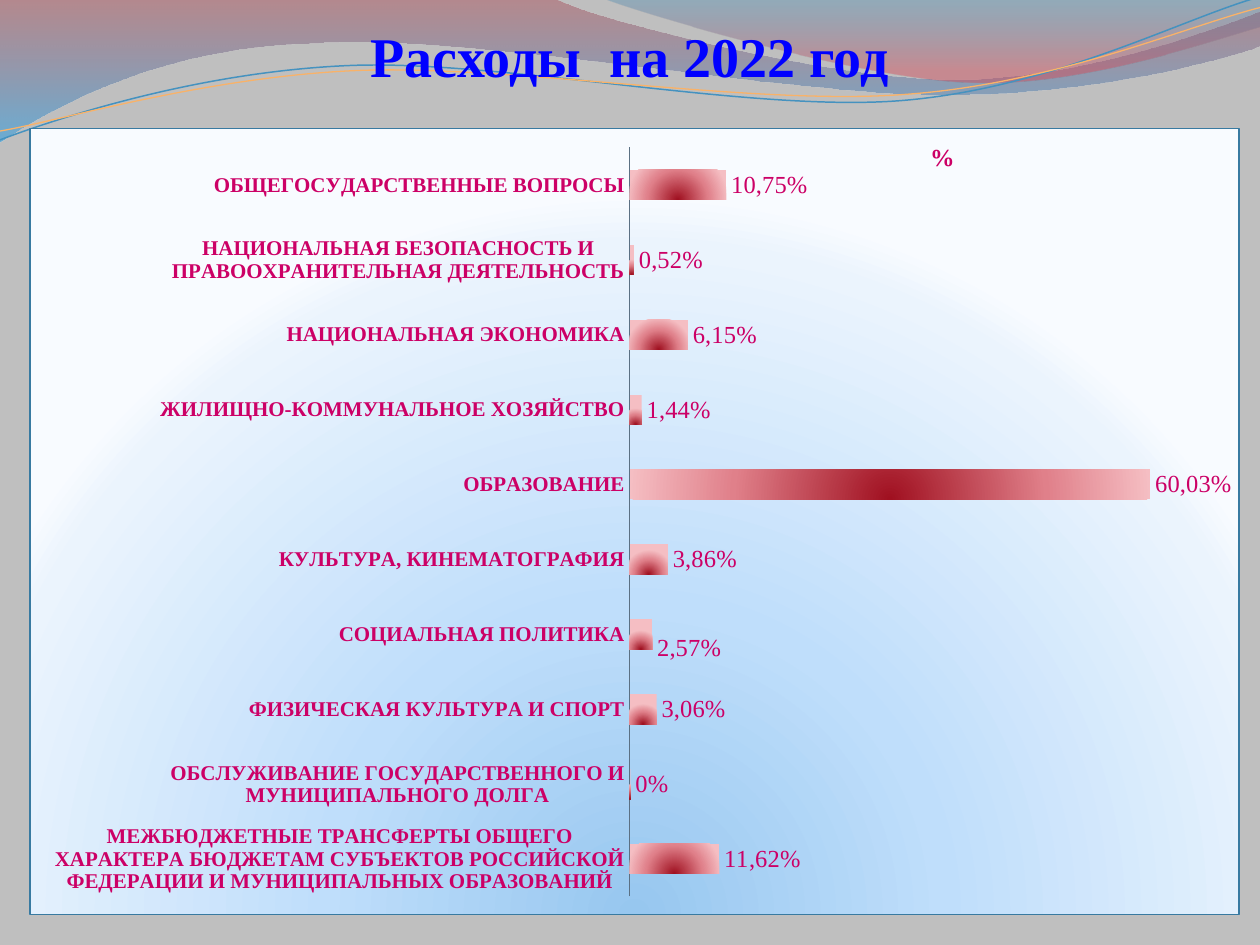
import math

from pptx import Presentation, util as u
from pptx.chart.data import CategoryChartData
from pptx.dml.color import RGBColor
from pptx.enum import chart as ch, text as tx
from pptx.oxml import parse_xml
from pptx.oxml.ns import nsdecls, qn

COLORS = {"background": "BFBFBF", "heading": "0000FF", "text": "CC0066",
          "border": "387AA1", "axis": "5B7083",
          "blue line": "4592BF", "orange line": "F9B268"}
FONT = "Times New Roman"

# Gradient stops: position %, colour, opacity %
LEFT_STOPS = [(0, "A84752", 45), (100, "249FE6", 55)]
RIGHT_STOPS = [(0, "2A7EAF", 30), (80, "D24B5A", 45)]
PANEL_STOPS = [(0, "97C7EF", 100), (43, "BFDEFB", 100),
               (93, "EBF4FD", 100), (100, "F8FBFF", 100)]
BAR_STOPS = [(0, "A01020", 100), (60, "E0808A", 100), (100, "F5BEC3", 100)]

# Outlines in inches: two numbers make a line, six make a Bezier curve
LEFT_WAVE = [(0, 0), (4.4, -0.01), (4.76, 0.17, 6.64, 0.63, 7.58, 0.63),
             (8.53, 0.63, 9.58, 0.26, 10, 0.09), (10.01, 0.36),
             (9.83, 0.44, 8.7, 0.76, 7.46, 0.75),
             (6.22, 0.75, 3.82, 0.28, 2.57, 0.34),
             (1.29, 0.36, 0.46, 0.83, -0.01, 1.13), (0, 0)]
RIGHT_WAVE = [(4.79, -0.01), (5.09, 0.11, 6.82, 0.62, 7.69, 0.65),
              (8.56, 0.69, 9.61, 0.32, 10, 0.21), (10, 0), (4.79, -0.01)]
BLUE_CURVE = [(0, 1.11), (0.48, 0.93, 1.58, 0.57, 2.77, 0.52),
              (3.95, 0.47, 5.93, 0.89, 7.13, 0.8),
              (8.33, 0.71, 9.38, 0.15, 9.98, -0.02)]
ORANGE_CURVE = [(0, 1.04), (0.47, 0.96, 1.64, 0.61, 2.83, 0.56),
                (4.03, 0.51, 5.97, 0.84, 7.17, 0.75),
                (8.36, 0.67, 9.41, 0.21, 10, 0.06)]
CURVE_TILT = -2.7
CURVE_CENTER = (4.99, 0.58)

# Category, bar length, label; from the bottom bar up
EXPENSES = [
    ("МЕЖБЮДЖЕТНЫЕ ТРАНСФЕРТЫ ОБЩЕГО ХАРАКТЕРА БЮДЖЕТАМ СУБЪЕКТОВ "
     "РОССИЙСКОЙ ФЕДЕРАЦИИ И МУНИЦИПАЛЬНЫХ ОБРАЗОВАНИЙ", 0.103, "11,62%"),
    ("ОБСЛУЖИВАНИЕ ГОСУДАРСТВЕННОГО И МУНИЦИПАЛЬНОГО ДОЛГА", 0.001, "0%"),
    ("ФИЗИЧЕСКАЯ КУЛЬТУРА И СПОРТ", 0.031, "3,06%"),
    ("СОЦИАЛЬНАЯ ПОЛИТИКА", 0.026, "\n2,57%"),
    ("КУЛЬТУРА, КИНЕМАТОГРАФИЯ", 0.044, "3,86%"),
    ("ОБРАЗОВАНИЕ", 0.598, "60,03%"),
    ("ЖИЛИЩНО-КОММУНАЛЬНОЕ ХОЗЯЙСТВО", 0.014, "1,44%"),
    ("НАЦИОНАЛЬНАЯ ЭКОНОМИКА", 0.067, "6,15%"),
    ("НАЦИОНАЛЬНАЯ БЕЗОПАСНОСТЬ И ПРАВООХРАНИТЕЛЬНАЯ ДЕЯТЕЛЬНОСТЬ",
     0.005, "0,52%"),
    ("ОБЩЕГОСУДАРСТВЕННЫЕ ВОПРОСЫ", 0.111, "10,75%"),
]


def rgb(name):
    return RGBColor.from_string(COLORS[name])


def style_font(font, size, color="text", bold=False):
    font.name, font.size, font.bold = FONT, u.Pt(size), bold
    font.color.rgb = rgb(color)


def write_text(frame, text, align=None, **style):
    paragraph = frame.paragraphs[0]
    paragraph.alignment = align
    run = paragraph.add_run()
    run.text = text
    style_font(run.font, **style)


def set_gradient(properties, stops, radial=False):
    """Replace the empty fill of a shape-properties element by a gradient."""
    stop_xml = "".join(
        f'<a:gs pos="{pos * 1000}"><a:srgbClr val="{color}">'
        f'<a:alpha val="{opacity * 1000}"/></a:srgbClr></a:gs>'
        for pos, color, opacity in stops)
    direction = ('<a:path path="circle"><a:fillToRect l="50000" t="130000" '
                 'r="50000" b="-30000"/></a:path>' if radial
                 else '<a:lin ang="5400000" scaled="1"/>')
    gradient = parse_xml(f'<a:gradFill {nsdecls("a")} rotWithShape="1"><a:gsLst>'
                         f'{stop_xml}</a:gsLst>{direction}</a:gradFill>')
    properties.replace(properties.find(qn("a:noFill")), gradient)


def turn(point, degrees):
    """Turn a point about the centre of the curves."""
    cos, sin = math.cos(math.radians(degrees)), math.sin(math.radians(degrees))
    x, y = (value - middle for value, middle in zip(point, CURVE_CENTER))
    return CURVE_CENTER[0] + x * cos - y * sin, CURVE_CENTER[1] + x * sin + y * cos


def add_outline(slide, outline, tilt=0, closed=False):
    """Draw through all points, then join each curve's three points into a Bezier."""
    points = [turn(part[i:i + 2], -tilt) for part in outline
              for i in range(0, len(part), 2)]
    start, *rest = [(u.Cm(2.54 * x), u.Cm(2.54 * y)) for x, y in points]
    builder = slide.shapes.build_freeform(*start)
    builder.add_line_segments(rest, close=closed)
    shape = builder.convert_to_shape()
    lines = iter(list(shape.element.iter(qn("a:lnTo"))))
    for part in outline[1:]:
        first = next(lines)
        if len(part) == 6:
            curve = parse_xml(f'<a:cubicBezTo {nsdecls("a")}/>')
            first.addprevious(curve)
            for line in (first, next(lines), next(lines)):
                curve.append(line[0])
                line.getparent().remove(line)
    shape.rotation = tilt
    shape.shadow.inherit = False
    shape.fill.background()
    return shape


def add_wave(slide, outline, stops):
    wave = add_outline(slide, outline, closed=True)
    wave.line.fill.background()
    set_gradient(wave.element.spPr, stops)


def add_curve(slide, outline, color, width):
    curve = add_outline(slide, outline, tilt=CURVE_TILT)
    curve.line.color.rgb = rgb(color)
    curve.line.width = u.Pt(width)


def add_heading(slide, text):
    box = slide.shapes.add_textbox(u.Cm(0), u.Cm(0.58), u.Cm(25.4), u.Cm(1.2))
    frame = box.text_frame
    frame.word_wrap = True
    frame.vertical_anchor = tx.MSO_ANCHOR.BOTTOM
    frame.margin_left = frame.margin_right = frame.margin_bottom = 0
    write_text(frame, text, align=tx.PP_ALIGN.CENTER,
               size=32, color="heading", bold=True)


def set_layout(parent, index, **values):
    """Place a chart part by hand; index is where its layout element belongs."""
    layout = parent.find(qn("c:layout"))
    if layout is None:
        layout = parse_xml(f'<c:layout {nsdecls("c")}/>')
        parent.insert(index, layout)
    items = "".join(f'<c:{key} val="{value}"/>' for key, value in values.items())
    layout.append(parse_xml(
        f'<c:manualLayout {nsdecls("c")}>{items}</c:manualLayout>'))


def format_axes(chart):
    categories, values = chart.category_axis, chart.value_axis
    categories.major_tick_mark = ch.XL_TICK_MARK.NONE
    categories.format.line.color.rgb = rgb("axis")
    categories.format.line.width = u.Pt(0.75)
    style_font(categories.tick_labels.font, size=12, bold=True)
    values.minimum_scale, values.maximum_scale = 0, 0.7
    values.has_major_gridlines = False
    values.visible = False


def label_bars(series):
    labels = series.data_labels
    labels.show_value = True
    labels.number_format, labels.number_format_is_linked = "0.0%", False
    style_font(labels.font, size=14)
    for index, (_, _, label) in enumerate(EXPENSES):
        data_label = series.points[index].data_label
        write_text(data_label.text_frame, label, size=14)
        data_label.position = ch.XL_LABEL_POSITION.OUTSIDE_END


def add_expense_chart(slide):
    data = CategoryChartData(number_format="0.0%")
    data.categories = [category for category, _, _ in EXPENSES]
    data.add_series("%", [value for _, value, _ in EXPENSES])
    chart = slide.shapes.add_chart(
        ch.XL_CHART_TYPE.BAR_CLUSTERED, u.Cm(0.59), u.Cm(2.58),
        u.Cm(24.4), u.Cm(15.87), data).chart
    chart.has_legend = False
    style_font(chart.font, size=12, bold=True)
    format_axes(chart)
    write_text(chart.chart_title.text_frame, "%", size=14, bold=True)

    plot = chart.plots[0]
    plot.gap_width, plot.overlap = 150, -25
    plot.vary_by_categories = False
    bars = plot.series[0]
    bars.format.fill.background()
    label_bars(bars)

    root = chart.element
    set_gradient(root.find(f'.//{qn("c:ser")}/{qn("c:spPr")}'), BAR_STOPS, radial=True)
    panel = parse_xml(
        f'<c:spPr {nsdecls("c", "a")}><a:noFill/><a:ln w="9525"><a:solidFill>'
        f'<a:srgbClr val="{COLORS["border"]}"/></a:solidFill></a:ln></c:spPr>')
    set_gradient(panel, PANEL_STOPS, radial=True)
    root.find(qn("c:txPr")).addprevious(panel)
    set_layout(root.find(f'.//{qn("c:plotArea")}'), 0, layoutTarget="inner",
               xMode="edge", yMode="edge", x=0.496, y=0.024, w=0.504, h=0.953)
    set_layout(root.find(f'.//{qn("c:title")}'), 1,
               xMode="edge", yMode="edge", x=0.741, y=0.011)


def main():
    deck = Presentation()
    deck.slide_width, deck.slide_height = u.Cm(25.4), u.Cm(19.05)
    slide = deck.slides.add_slide(deck.slide_layouts[6])
    slide.background.fill.solid()
    slide.background.fill.fore_color.rgb = rgb("background")
    add_wave(slide, LEFT_WAVE, LEFT_STOPS)
    add_wave(slide, RIGHT_WAVE, RIGHT_STOPS)
    add_curve(slide, BLUE_CURVE, "blue line", 0.85)
    add_curve(slide, ORANGE_CURVE, "orange line", 0.75)
    add_heading(slide, "Расходы  на 2022 год")
    add_expense_chart(slide)
    deck.save("out.pptx")


if __name__ == "__main__":
    main()
